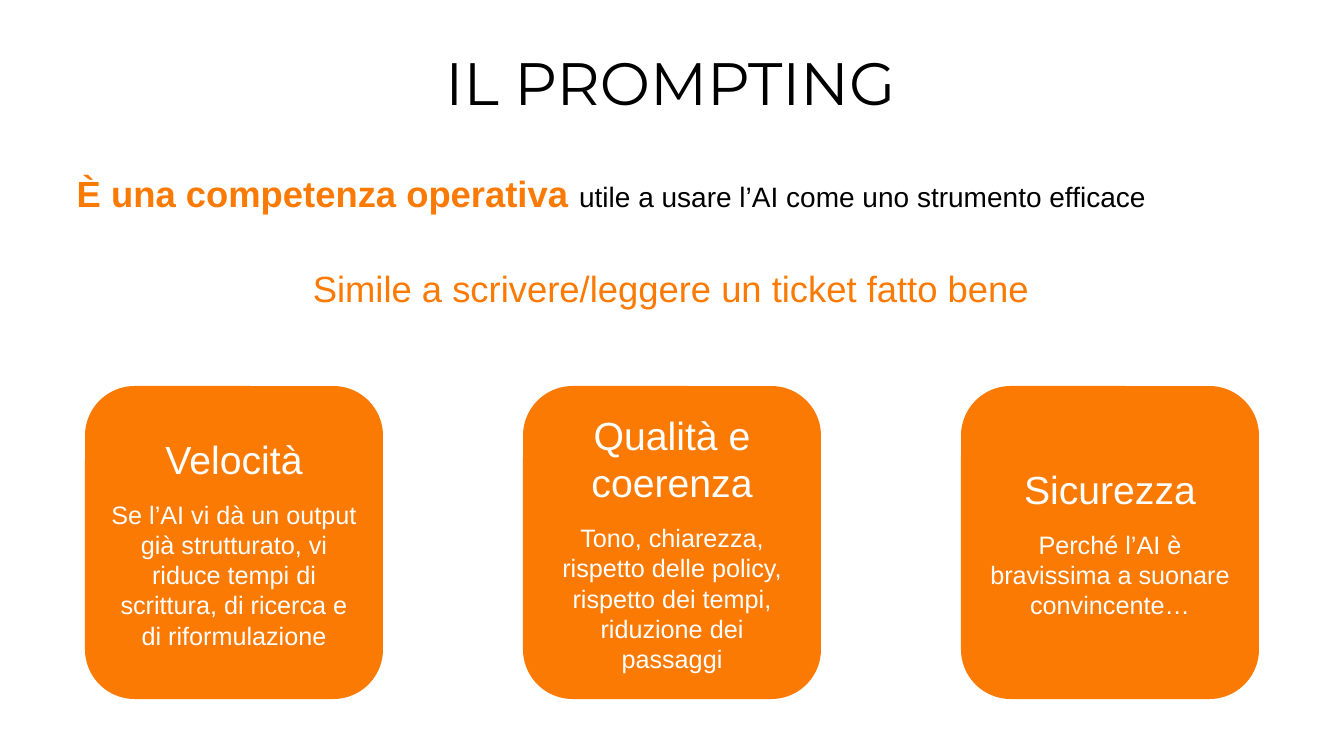
import pptx
import pptx.util
import pptx.dml.color
import pptx.enum.shapes
import pptx.enum.text

ORANGE, BLACK, WHITE = "FA7A04", "000000", "FFFFFF"

# Lines: box in px, line spacing, runs of (text, font, size, colour, bold)
LINES = [
    ((85, 60, 1171, 39), 0.8,
     [("IL PROMPTING", "Montserrat", 42.7, BLACK, False)]),
    ((-33, 171, 1289, 55), 1.0,
     [("È una competenza operativa ", "Arial", 26, ORANGE, True),
      ("utile a usare l’AI come uno strumento efficace", "Arial", 20, BLACK, False)]),
    ((27, 266, 1289, 55), 1.0,
     [("Simile a scrivere/leggere un ticket fatto bene", "Arial", 26, ORANGE, False)]),
]

CARDS = [
    ("Velocità", "Se l’AI vi dà un output già strutturato, vi riduce tempi di "
                 "scrittura, di ricerca e di riformulazione"),
    ("Qualità e coerenza", "Tono, chiarezza, rispetto delle policy, rispetto dei tempi, "
                           "riduzione dei passaggi"),
    ("Sicurezza", "Perché l’AI è bravissima a suonare convincente…"),
]
CARD_LEFT, CARD_TOP, CARD_WIDTH, CARD_HEIGHT, CARD_STEP = 85, 386, 298, 313, 438


def px(n):
    return pptx.util.Emu(round(n * 914400 / 100.8))


def color(value):
    return pptx.dml.color.RGBColor.from_string(value)


def add_run(p, text, font, size, fill, bold=False):
    r = p.add_run()
    r.text = text
    r.font.name = font
    r.font.size = pptx.util.Pt(size)
    r.font.bold = bold
    r.font.color.rgb = color(fill)


prs = pptx.Presentation()
prs.slide_width, prs.slide_height = px(1344), px(756)
s = prs.slides.add_slide(prs.slide_layouts[6])

# Title and statements
for box, spacing, runs in LINES:
    tf = s.shapes.add_textbox(*map(px, box)).text_frame
    tf.word_wrap = True
    tf.margin_left = tf.margin_right = tf.margin_top = tf.margin_bottom = 0
    p = tf.paragraphs[0]
    p.alignment = pptx.enum.text.PP_ALIGN.CENTER
    p.line_spacing = spacing
    for run in runs:
        add_run(p, *run)

# Row of benefit cards
for i, (heading, detail) in enumerate(CARDS):
    sp = s.shapes.add_shape(
        pptx.enum.shapes.MSO_SHAPE.ROUNDED_RECTANGLE,
        px(CARD_LEFT + i * CARD_STEP), px(CARD_TOP), px(CARD_WIDTH), px(CARD_HEIGHT))
    sp.shadow.inherit = False
    sp.fill.solid()
    sp.fill.fore_color.rgb = color(ORANGE)
    sp.line.fill.background()
    tf = sp.text_frame
    tf.word_wrap = True
    tf.vertical_anchor = pptx.enum.text.MSO_ANCHOR.MIDDLE
    add_run(tf.paragraphs[0], heading, "Arial", 28, WHITE)
    p = tf.add_paragraph()
    p.space_before = pptx.util.Pt(12)
    add_run(p, detail, "Arial", 18, WHITE)
    for p in tf.paragraphs:
        p.alignment = pptx.enum.text.PP_ALIGN.CENTER

prs.save("out.pptx")
